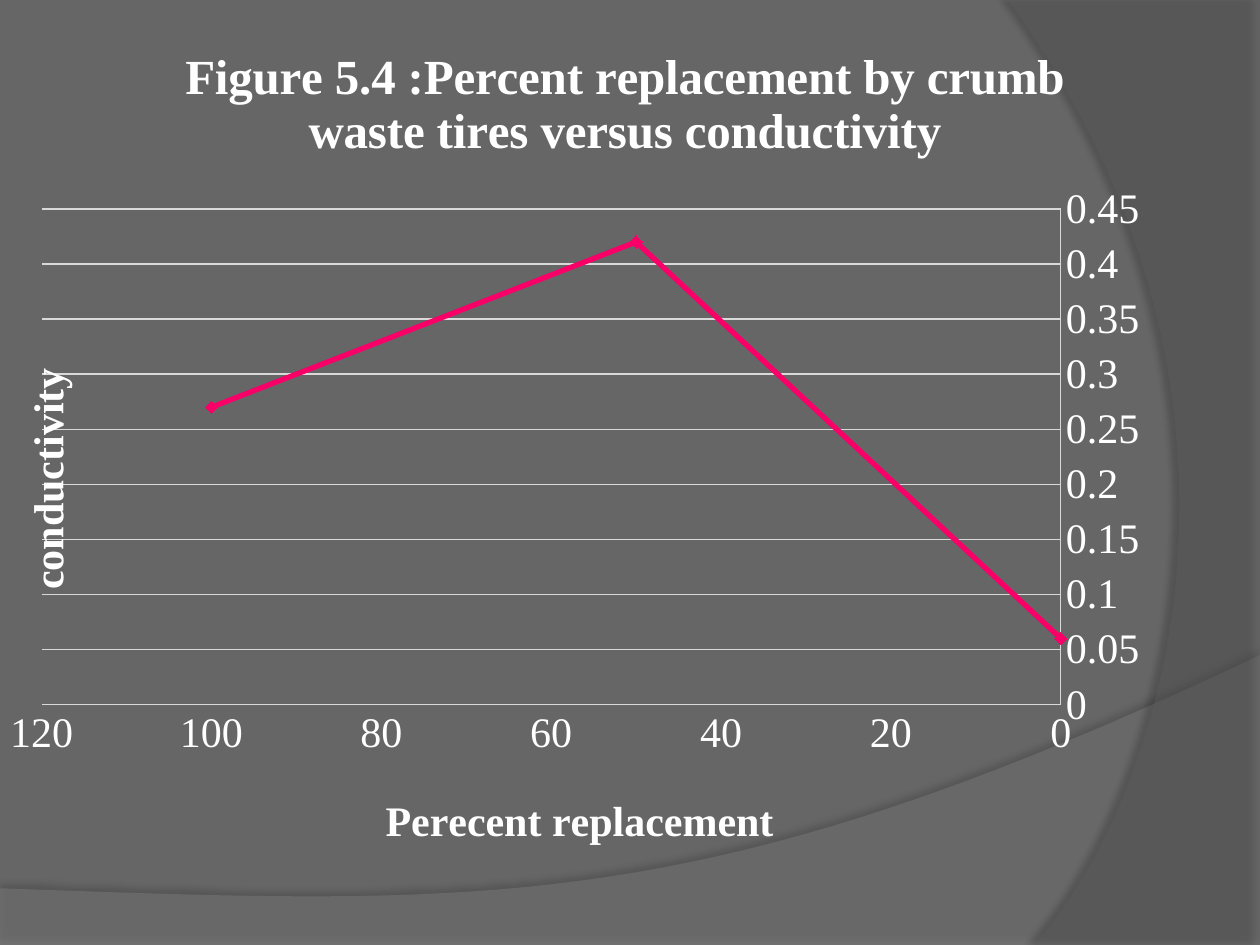
import pptx
import pptx.chart.data
import pptx.dml.color
import pptx.enum.chart
import pptx.oxml
import pptx.oxml.ns
import pptx.util
from lxml import etree

Inches = pptx.util.Inches
Pt = pptx.util.Pt
RGB = pptx.dml.color.RGBColor
qn = pptx.oxml.ns.qn

BACKGROUND = RGB(0x66, 0x66, 0x66)
WAVE = RGB(0x7F, 0x7F, 0x7F)
CRESCENT = RGB(0x5E, 0x5E, 0x5E)
WHITE = RGB(0xFF, 0xFF, 0xFF)
GRID = RGB(0xD9, 0xD9, 0xD9)
PINK = RGB(0xFF, 0x38, 0x8C)
FONT = "Times New Roman"


def bezier(start, control_1, control_2, end, steps=40):
    """Points along a cubic curve, both ends included."""
    points = []
    for step in range(steps + 1):
        t = step / steps
        weights = ((1 - t) ** 3, 3 * t * (1 - t) ** 2, 3 * t * t * (1 - t), t ** 3)
        points.append(tuple(
            sum(w * p for w, p in zip(weights, axis))
            for axis in zip(start, control_1, control_2, end)))
    return points


def format_font(font, size=24, bold=False, color=WHITE):
    font.name, font.size, font.bold = FONT, Pt(size), bold
    font.color.rgb = color


def write(frame, text, **style):
    paragraph = frame.paragraphs[0]
    run = paragraph.add_run()
    run.text = text
    format_font(run.font, **style)


def place(parent, before, x, y, w=None, h=None):
    """Give a chart part a manual layout, as fractions of the chart."""
    for old in parent.findall(qn("c:layout")):
        parent.remove(old)
    layout = etree.Element(qn("c:layout"))
    manual = etree.SubElement(layout, qn("c:manualLayout"))
    settings = [("xMode", "edge"), ("yMode", "edge"), ("x", x), ("y", y)]
    if w is not None:
        settings.insert(0, ("layoutTarget", "inner"))
        settings += [("w", w), ("h", h)]
    for tag, value in settings:
        etree.SubElement(manual, qn("c:" + tag)).set("val", str(value))
    parent.insert(before, layout)


class Deck:
    def __init__(self):
        self.presentation = pptx.Presentation()
        self.presentation.slide_width = Inches(10)
        self.presentation.slide_height = Inches(7.5)
        self.slide = self.presentation.slides.add_slide(
            self.presentation.slide_layouts[6])
        fill = self.slide.background.fill
        fill.solid()
        fill.fore_color.rgb = BACKGROUND

    def backdrop(self, points, color, alpha, shadow_alpha, distance, angle):
        """A translucent outline with a soft black shadow; alphas in percent."""
        corners = [(Inches(x), Inches(y)) for x, y in points]
        builder = self.slide.shapes.build_freeform(*corners[0], scale=1.0)
        builder.add_line_segments(corners[1:], close=True)
        shape = builder.convert_to_shape()
        shape.fill.solid()
        shape.fill.fore_color.rgb = color
        shape.line.fill.background()
        shape.shadow.inherit = False
        properties = shape._element.spPr
        fill_color = properties.find(qn("a:solidFill"))[0]
        etree.SubElement(fill_color, qn("a:alpha")).set("val", str(alpha * 1000))
        shadow = etree.SubElement(
            properties.find(qn("a:effectLst")), qn("a:outerShdw"),
            blurRad=str(Pt(4)), dist=str(Pt(distance)), dir=str(angle * 60000),
            algn="ctr", rotWithShape="0")
        black = etree.SubElement(shadow, qn("a:srgbClr"), val="000000")
        etree.SubElement(black, qn("a:alpha")).set("val", str(shadow_alpha * 1000))

    def title(self, owner, text, x, y, size=24):
        """Title a chart or an axis at a fixed place."""
        title = owner.chart_title if hasattr(owner, "chart_title") else owner.axis_title
        write(title.text_frame, text, size=size, bold=True)
        place(title._element, 1, x, y)
        return title

    def axis(self, axis, maximum, step):
        axis.minimum_scale, axis.maximum_scale, axis.major_unit = 0, maximum, step
        axis.major_tick_mark = axis.minor_tick_mark = pptx.enum.chart.XL_TICK_MARK.NONE
        axis.tick_labels.number_format = "General"
        axis.tick_labels.number_format_is_linked = False
        format_font(axis.tick_labels.font)
        self.stroke(axis.format.line)

    def stroke(self, line, color=GRID, width=0.75):
        line.color.rgb = color
        line.width = Pt(width)

    def smooth_scatter(self, points):
        data = pptx.chart.data.XyChartData()
        readings = data.add_series("Series 1")
        for replacement, conductivity in points:
            readings.add_data_point(replacement, conductivity)
        chart = self.slide.shapes.add_chart(
            pptx.enum.chart.XL_CHART_TYPE.XY_SCATTER_SMOOTH,
            0, 0, Inches(10), Inches(7.34), data).chart
        format_font(chart.font)
        chart.has_legend = False
        place(chart._chartSpace.chart.plotArea, 0, 0.033, 0.226, 0.809, 0.536)

        curve = chart.plots[0].series[0]
        curve.smooth = True
        self.stroke(curve.format.line, PINK, 3)
        curve.format.line.color.brightness = -0.2
        curve.marker.style = pptx.enum.chart.XL_MARKER_STYLE.DIAMOND
        curve.marker.size = 7
        curve.marker.format.fill.solid()
        curve.marker.format.fill.fore_color.rgb = PINK
        curve.marker.format.fill.fore_color.brightness = -0.2
        curve.marker.format.line.fill.background()
        return chart


def main():
    deck = Deck()
    wave = [(0, 7.5), (10, 7.5)] + bezier((10, 5.2), (5.59, 7.29), (3.91, 7.19), (0, 7.05))
    deck.backdrop(wave, WAVE, 45, 35, 3.5, 270)
    crescent = [(10, 0), (10, 7.5)] + bezier((8.21, 7.5), (9.35, 6.19), (10.18, 3), (8, 0))
    deck.backdrop(crescent, CRESCENT, 40, 45, 4, 180)

    chart = deck.smooth_scatter([(0, 0.06), (50, 0.42), (100, 0.27)])
    deck.title(chart, "Figure 5.4 :Percent replacement by crumb waste tires versus conductivity",
               0.14, 0.04, size=28)

    replacement, conductivity = chart.category_axis, chart.value_axis
    deck.axis(replacement, 120, 20)
    replacement.has_major_gridlines = False
    replacement.reverse_order = True
    deck.title(replacement, "Perecent replacement", 0.3, 0.85)

    deck.axis(conductivity, 0.45, 0.05)
    conductivity.has_major_gridlines = True
    deck.stroke(conductivity.major_gridlines.format.line)
    label = deck.title(conductivity, "conductivity", 0.01, 0.39)
    turn = label.text_frame._txBody.find(qn("a:bodyPr"))
    turn.set("rot", "-5400000")
    turn.set("vert", "horz")

    deck.presentation.save("out.pptx")


if __name__ == "__main__":
    main()
